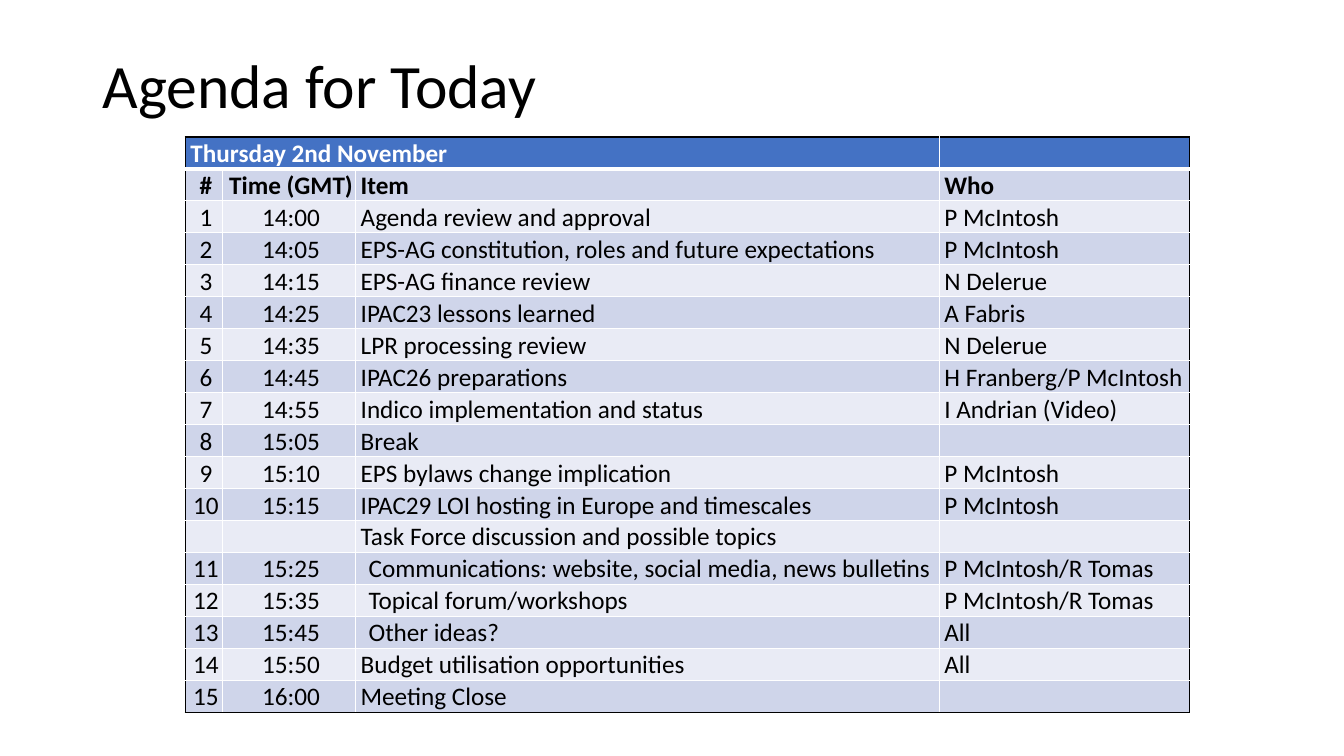
"""Build the agenda slide with its timetable."""
from typing import Any, NamedTuple

from lxml.etree import SubElement
from pptx import Presentation
from pptx.dml.color import RGBColor as RGB
from pptx.enum.text import MSO_ANCHOR as ANCHOR, MSO_AUTO_SIZE as AUTO, PP_ALIGN as ALIGN
from pptx.oxml.ns import qn
from pptx.util import Cm, Pt

COLORS = {
    "text": "000000",
    "white": "FFFFFF",
    "header": "4472C4",
    "dark_band": "CFD5EA",
    "light_band": "E9EBF5",
}
FONT = "Calibri"
COL_WIDTHS = (0.94, 3.35, 14.71, 6.3)
ROW_HEIGHT = 0.79
TABLE_LEFT, TABLE_TOP = 4.67, 3.45
CELL_FORMAT = {
    "margin_left": Cm(0.03),
    "margin_right": Cm(0.03),
    "margin_top": Cm(0.03),
    "margin_bottom": 0,
    "vertical_anchor": ANCHOR.BOTTOM,
}


class Entry(NamedTuple):
    """One row of the agenda."""

    number: str
    time: str
    item: str
    who: str = ""
    subtopic: bool = False


AGENDA = (
    Entry("Thursday 2nd November", "", ""),
    Entry("#", "Time (GMT)", "Item", "Who"),
    Entry("1", "14:00", "Agenda review and approval", "P McIntosh"),
    Entry("2", "14:05", "EPS-AG constitution, roles and future expectations", "P McIntosh"),
    Entry("3", "14:15", "EPS-AG finance review", "N Delerue"),
    Entry("4", "14:25", "IPAC23 lessons learned", "A Fabris"),
    Entry("5", "14:35", "LPR processing review", "N Delerue"),
    Entry("6", "14:45", "IPAC26 preparations", "H Franberg/P McIntosh"),
    Entry("7", "14:55", "Indico implementation and status", "I Andrian (Video)"),
    Entry("8", "15:05", "Break"),
    Entry("9", "15:10", "EPS bylaws change implication", "P McIntosh"),
    Entry("10", "15:15", "IPAC29 LOI hosting in Europe and timescales", "P McIntosh"),
    Entry("", "", "Task Force discussion and possible topics"),
    Entry("11", "15:25", "Communications: website, social media, news bulletins",
          "P McIntosh/R Tomas", True),
    Entry("12", "15:35", "Topical forum/workshops", "P McIntosh/R Tomas", True),
    Entry("13", "15:45", "Other ideas?", "All", True),
    Entry("14", "15:50", "Budget utilisation opportunities", "All"),
    Entry("15", "16:00", "Meeting Close"),
)


def apply_format(target: Any, values: dict[str, Any]) -> None:
    """Set each named attribute on the target."""
    for name, value in values.items():
        setattr(target, name, value)


def add_run(p: Any, text: str, size: float, color: str, bold: bool = False) -> None:
    """Append a formatted run to a paragraph."""
    r = p.add_run()
    r.text = text
    apply_format(r.font, {"name": FONT, "size": Pt(size), "bold": bold})
    r.font.color.rgb = RGB.from_string(COLORS[color])


def add_border(cell: Any, side: str, color: str, width: float) -> None:
    """Draw one side of a cell."""
    ln = SubElement(cell._tc.get_or_add_tcPr(), qn(f"a:ln{side}"), w=str(Pt(width)))
    SubElement(SubElement(ln, qn("a:solidFill")), qn("a:srgbClr"), val=COLORS[color])


def format_cell(cell: Any, row: int, col: int) -> None:
    """Give a cell its margins, borders and band colour."""
    apply_format(cell, CELL_FORMAT)
    outer = {
        "L": col == 0,
        "R": col == len(COL_WIDTHS) - 1,
        "T": row == 0,
        "B": row == len(AGENDA) - 1,
    }
    for side, is_outer in outer.items():
        width = 3 if row == 0 and side == "B" else 1
        add_border(cell, side, "text" if is_outer else "white", width)
    band = "header" if row == 0 else "dark_band" if row % 2 else "light_band"
    cell.fill.solid()
    cell.fill.fore_color.rgb = RGB.from_string(COLORS[band])


def write_cell(cell: Any, text: str, row: int, col: int) -> None:
    """Write the text of a cell."""
    p = cell.text_frame.paragraphs[0]
    p.alignment = ALIGN.CENTER if row > 0 and col < 2 else ALIGN.LEFT
    p._p.get_or_add_pPr().set("marL", str(Cm(0.1)))
    add_run(p, text, 18, "white" if row == 0 else "text", row < 2)


def add_title(s: Any, text: str) -> None:
    """Place and format the slide title."""
    sp = s.shapes.title
    apply_format(sp, {"left": Cm(2.33), "top": Cm(1.01), "width": Cm(29.21), "height": Cm(2.44)})
    tf = sp.text_frame
    apply_format(tf, {"word_wrap": True, "auto_size": AUTO.NONE, "vertical_anchor": ANCHOR.MIDDLE})
    p = tf.paragraphs[0]
    apply_format(p, {"alignment": ALIGN.LEFT, "line_spacing": 0.9})
    add_run(p, text, 44, "text")


def add_agenda(s: Any) -> None:
    """Add the agenda table."""
    table = s.shapes.add_table(
        len(AGENDA), len(COL_WIDTHS), Cm(TABLE_LEFT), Cm(TABLE_TOP),
        Cm(sum(COL_WIDTHS)), Cm(ROW_HEIGHT * len(AGENDA)),
    ).table
    for column, width in zip(table.columns, COL_WIDTHS):
        column.width = Cm(width)
    for row, entry in enumerate(AGENDA):
        table.rows[row].height = Cm(ROW_HEIGHT)
        for col, text in enumerate(entry[:len(COL_WIDTHS)]):
            cell = table.cell(row, col)
            format_cell(cell, row, col)
            if text:
                write_cell(cell, text, row, col)
        if entry.subtopic:
            table.cell(row, 2).margin_left = Cm(0.23)
    table.cell(0, 0).merge(table.cell(0, 2))


def main() -> None:
    """Create and save the presentation."""
    prs = Presentation()
    apply_format(prs, {"slide_width": Cm(33.87), "slide_height": Cm(19.05)})
    s = prs.slides.add_slide(prs.slide_layouts[5])
    add_title(s, "Agenda for Today")
    add_agenda(s)
    prs.save("out.pptx")


if __name__ == "__main__":
    main()
